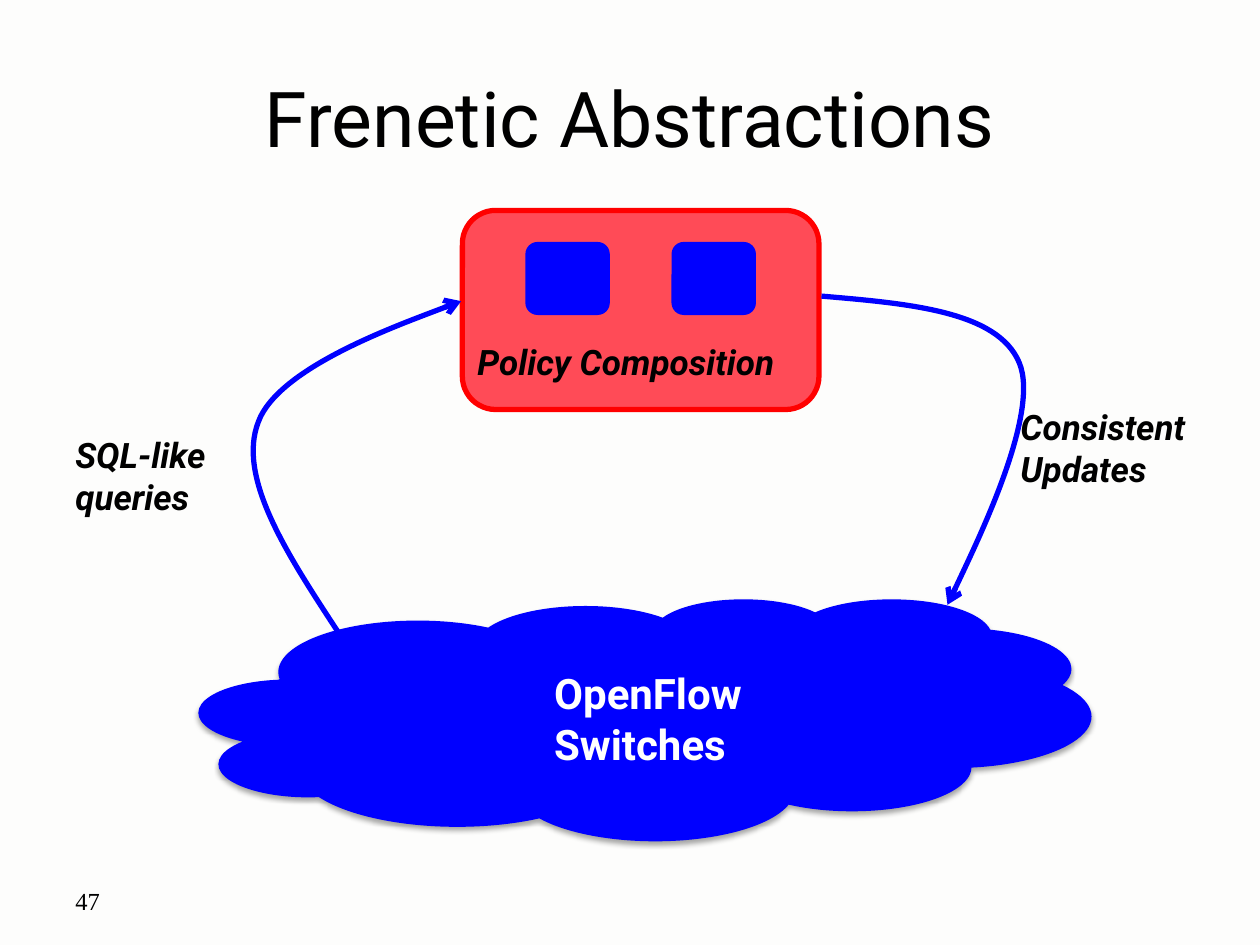
from lxml.etree import SubElement
from pptx import Presentation
from pptx.dml.color import RGBColor
from pptx.enum.shapes import MSO_SHAPE
from pptx.enum.text import MSO_ANCHOR, MSO_AUTO_SIZE, PP_ALIGN
from pptx.oxml.ns import qn
from pptx.util import Inches, Pt

BLUE, RED, ROSE = "0000FF", "FF0000", "FF4B57"
BLACK, WHITE, PAPER = "000000", "FFFFFF", "FDFDFC"

TITLE = "Frenetic Abstractions"
BOX = (3.67, 1.67, 2.83, 1.58)
CLOUD = (1.58, 4.75, 7.08, 1.92)
TILES = [(x, 1.92, 0.67, 0.58) for x in (4.17, 5.33)]
CURVES = [
    [(2.68, 5.01), (2.28, 4.4), (1.88, 3.79), (2.05, 3.35),
     (2.21, 2.91), (3.66, 2.39), (3.66, 2.39)],
    [(6.52, 2.35), (7.22, 2.41), (7.92, 2.47), (8.09, 2.88),
     (8.26, 3.29), (7.52, 4.8), (7.52, 4.8)],
]
NOTE = dict(size=20, bold=True, italic=True)
LABELS = [
    ("SQL-like\vqueries", (0.5, 3.39, 1.66, 0.77), NOTE),
    ("OpenFlow\nSwitches", (4.3, 5.25, 1.83, 0.91),
     dict(size=24, color=WHITE, bold=True, wrap=False)),
    ("Consistent\nUpdates", (8, 3.17, 1.66, 0.77), NOTE),
    ("Policy Composition", (3.69, 2.65, 3, 0.44), NOTE),
]
NUMBER = ("47", (0.5, 6.95, 2.33, 0.4),
          dict(size=14, font="Times New Roman", anchor=MSO_ANCHOR.MIDDLE, grow=False))


def rgb(code):
    return RGBColor.from_string(code)


def write(text, at, shape=None, size=20, font="Roboto", color=BLACK, bold=False,
          italic=False, align=PP_ALIGN.LEFT, anchor=MSO_ANCHOR.TOP,
          wrap=True, grow=True):
    at = [Inches(v) for v in at]
    if shape is None:
        shape = slide.shapes.add_textbox(*at)
    shape.left, shape.top, shape.width, shape.height = at
    frame = shape.text_frame
    frame.text = text
    frame.word_wrap = wrap
    frame.vertical_anchor = anchor
    frame.auto_size = MSO_AUTO_SIZE.SHAPE_TO_FIT_TEXT if grow else MSO_AUTO_SIZE.NONE
    for para in frame.paragraphs:
        para.alignment = align
        for run in para.runs:
            run.font.name, run.font.size = font, Pt(size)
            run.font.bold, run.font.italic = bold, italic
            run.font.color.rgb = rgb(color)


def paint(shape, fill=None, line=None):
    shape.shadow.inherit = False
    if fill:
        shape.fill.solid()
        shape.fill.fore_color.rgb = rgb(fill)
    else:
        shape.fill.background()
    if line:
        shape.line.color.rgb = rgb(line)
        shape.line.width = Pt(3)
    else:
        shape.line.fill.background()


def draw(kind, at, fill, line=None):
    shape = slide.shapes.add_shape(kind, *[Inches(v) for v in at])
    paint(shape, fill, line)
    return shape


def shade(shape):
    root = shape._element.spPr.find(qn("a:effectLst"))
    glow = SubElement(root, qn("a:outerShdw"), blurRad=str(Pt(3.1)),
                      dist=str(Pt(1.8)), dir="5400000", rotWithShape="0")
    tint = SubElement(glow, qn("a:srgbClr"), val=BLACK)
    SubElement(tint, qn("a:alpha"), val="35000")


def curve(points):
    start, *rest = [(Inches(x), Inches(y)) for x, y in points]
    pen = slide.shapes.build_freeform(*start)
    pen.add_line_segments(rest, close=False)
    shape = pen.convert_to_shape()
    paint(shape, line=BLUE)
    route = next(shape._element.iter(qn("a:path")))
    route.set("fill", "none")
    lines = route.findall(qn("a:lnTo"))
    for i in range(0, len(lines), 3):
        bend = SubElement(route, qn("a:cubicBezTo"))
        for part in lines[i:i + 3]:
            bend.append(part[0])
            route.remove(part)
    SubElement(shape.line._get_or_add_ln(), qn("a:tailEnd"), type="arrow")


deck = Presentation()
deck.slide_width, deck.slide_height = Inches(10), Inches(7.5)
slide = deck.slides.add_slide(deck.slide_layouts[5])
slide.background.fill.solid()
slide.background.fill.fore_color.rgb = rgb(PAPER)

write(TITLE, (0.5, 0.3, 9, 1.25), shape=slide.shapes.title, size=44,
      align=PP_ALIGN.CENTER, anchor=MSO_ANCHOR.MIDDLE, grow=False)
draw(MSO_SHAPE.ROUNDED_RECTANGLE, BOX, ROSE, RED)
shade(draw(MSO_SHAPE.CLOUD, CLOUD, BLUE))
for points in CURVES:
    curve(points)
for tile in TILES:
    draw(MSO_SHAPE.ROUNDED_RECTANGLE, tile, BLUE)
for text, at, style in [NUMBER, *LABELS]:
    write(text, at, **style)

deck.save("out.pptx")
